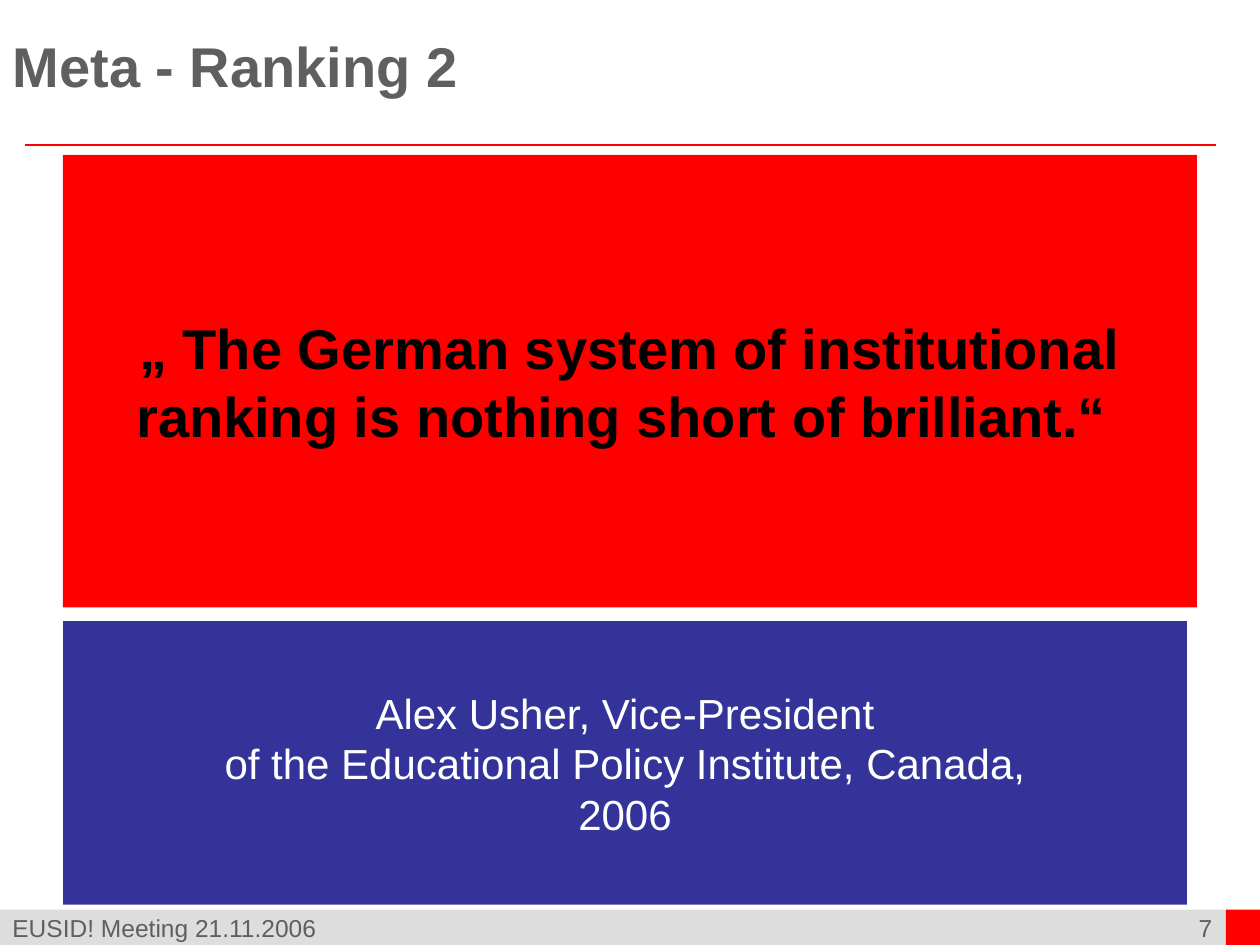
"""Build the "Meta - Ranking 2" quotation slide."""
from lxml import etree
from pptx import Presentation
from pptx import util as u
from pptx.dml.color import RGBColor
from pptx.enum import shapes, text
from pptx.oxml.ns import qn

COLORS = {"red": "FF0000", "blue": "333399", "band": "DDDDDD",
          "grey": "5F5F5F", "black": "000000", "white": "FFFFFF"}
ALIGN = text.PP_ALIGN


def add_block(left, top, width, height, fill):
    block = slide.shapes.add_shape(
        shapes.MSO_SHAPE.RECTANGLE,
        u.Inches(left), u.Inches(top), u.Inches(width), u.Inches(height))
    block.shadow.inherit = False
    block.fill.solid()
    block.fill.fore_color.rgb = RGBColor.from_string(COLORS[fill])
    block.line.fill.background()
    return block


def write(holder, lines, size, color, align, anchor, bold=False):
    frame = holder.text_frame
    frame.word_wrap = True
    frame.vertical_anchor = anchor
    frame.text = "\n".join(lines)
    for paragraph in frame.paragraphs:
        paragraph.alignment = align
        for run in paragraph.runs:
            run.font.name = "Arial"
            run.font.size = u.Pt(size)
            run.font.bold = bold
            run.font.color.rgb = RGBColor.from_string(COLORS[color])


prs = Presentation()
prs.slide_width, prs.slide_height = u.Inches(10), u.Inches(7.5)
slide = prs.slides.add_slide(prs.slide_layouts[5])

add_block(0, 7.22, 9.76, 0.28, "band")
rule = slide.shapes.add_connector(
    shapes.MSO_CONNECTOR.STRAIGHT,
    u.Inches(0.2), u.Inches(1.15), u.Inches(9.65), u.Inches(1.15))
rule.line.color.rgb = RGBColor.from_string(COLORS["red"])
rule.line.width = u.Pt(0.75)
etree.SubElement(rule._element.spPr, qn("a:effectLst"))
add_block(9.73, 7.22, 0.3, 0.3, "red")

for left, width, label, align in [
        (8.7, 1.02, "7", ALIGN.RIGHT),
        (0, 8.62, "EUSID! Meeting 21.11.2006", ALIGN.LEFT)]:
    footer = slide.shapes.add_textbox(
        u.Inches(left), u.Inches(7.2), u.Inches(width), u.Inches(0.33))
    write(footer, [label], 14, "grey", align, text.MSO_ANCHOR.TOP)

quote = add_block(0.5, 1.23, 9, 3.59, "red")
write(quote, ["„ The German system of institutional ranking is nothing short of brilliant.“ "],
      32, "black", ALIGN.CENTER, text.MSO_ANCHOR.MIDDLE, bold=True)

speaker = add_block(0.5, 4.93, 8.92, 2.25, "blue")
write(speaker, ["Alex Usher, Vice-President",
                "of the Educational Policy Institute, Canada,",
                "2006"],
      24, "white", ALIGN.CENTER, text.MSO_ANCHOR.MIDDLE)

title = slide.shapes.title
title.left, title.top = u.Inches(0), u.Inches(0.21)
title.width, title.height = u.Inches(7.32), u.Inches(0.61)
write(title, ["Meta - Ranking 2"], 32, "grey", ALIGN.LEFT, text.MSO_ANCHOR.MIDDLE, bold=True)

prs.save("out.pptx")
